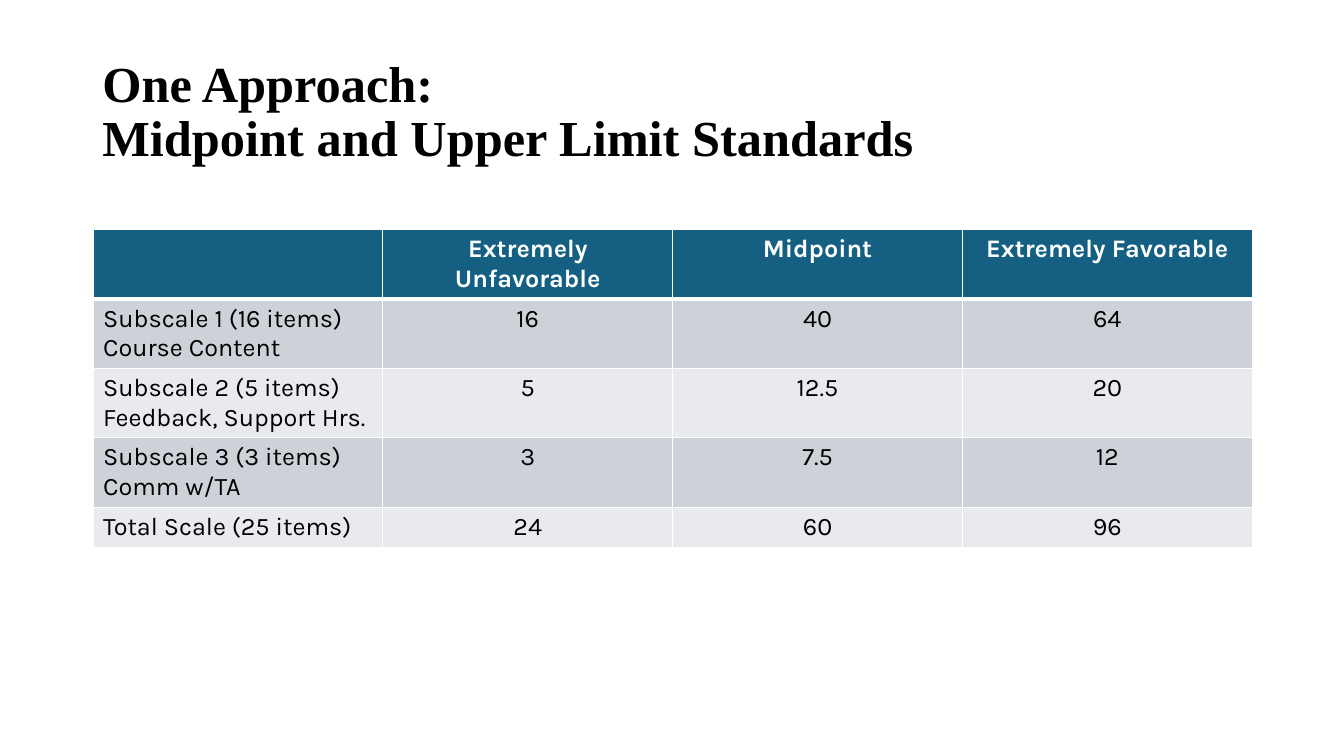
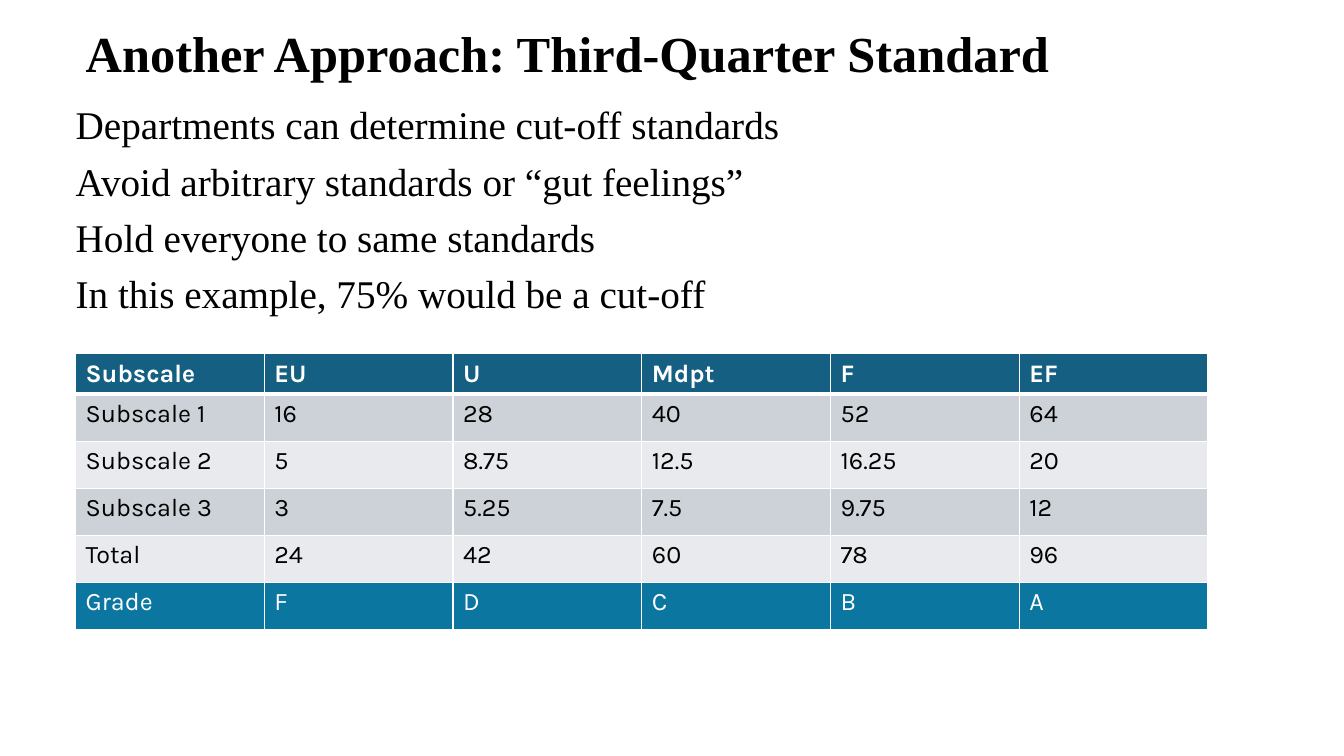
"""Build two slides on approaches to scale standards."""
from copy import deepcopy
from dataclasses import dataclass
from typing import Any, NamedTuple

from lxml.etree import SubElement
from pptx import Presentation
from pptx.dml.color import RGBColor
from pptx.enum.text import MSO_ANCHOR, MSO_AUTO_SIZE, PP_ALIGN
from pptx.oxml.ns import qn
from pptx.util import Pt


@dataclass(frozen=True)
class Theme:
    ink: str = "000000"
    white: str = "FFFFFF"
    head: str = "156082"
    odd: str = "CCD2D8"
    even: str = "E8EAED"
    grade: str = "0B76A0"
    serif: str = "Times New Roman"
    sans: str = "Karla"
    title: int = 36
    body: int = 28
    cell: int = 18
    thin: int = 1
    thick: int = 3


class Box(NamedTuple):
    left: float
    top: float
    width: float
    height: float


@dataclass(frozen=True)
class Grid:
    left: float
    top: float
    width: float
    rows: list[list[str]]
    heights: list[float]
    align: Any = PP_ALIGN.LEFT
    grade: bool = False


LOOK = Theme()
TITLE = dict(name=LOOK.serif, size=Pt(LOOK.title), bold=True)
BODY = dict(name=LOOK.serif, size=Pt(LOOK.body), bold=False)
CELL = dict(name=LOOK.sans, size=Pt(LOOK.cell), bold=False)
HEAD = CELL | dict(bold=True)
TIGHT = dict(alignment=PP_ALIGN.LEFT, line_spacing=0.9)
PLAIN = dict(first_row=False, horz_banding=False)

LIMITS = Grid(66.5, 164, 828, [
    ["", "Extremely Unfavorable", "Midpoint", "Extremely Favorable"],
    ["Subscale 1 (16 items)\nCourse Content", "16", "40", "64"],
    ["Subscale 2 (5 items)\nFeedback, Support Hrs.", "5", "12.5", "20"],
    ["Subscale 3 (3 items)\nComm w/TA", "3", "7.5", "12"],
    ["Total Scale (25 items)", "24", "60", "96"],
], [49, *[49.6] * 3, 29.2], PP_ALIGN.CENTER)

QUARTERS = Grid(54, 252.7, 809, [
    ["Subscale", "EU", "U", "Mdpt", "F", "EF"],
    ["Subscale 1", "16", "28", "40", "52", "64"],
    ["Subscale 2", "5", "8.75", "12.5", "16.25", "20"],
    ["Subscale 3", "3", "5.25", "7.5", "9.75", "12"],
    ["Total", "24", "42", "60", "78", "96"],
    ["Grade", "F", "D", "C", "B", "A"],
], [28, *[33.6] * 5], grade=True)

POINTS = """Departments can determine cut-off standards
Avoid arbitrary standards or “gut feelings”
Hold everyone to same standards
In this example, 75% would be a cut-off"""


def apply(item: Any, style: dict[str, Any]) -> None:
    """Set every attribute in a style."""
    for key, value in style.items():
        setattr(item, key, value)


def paint(frame: Any, font: dict[str, Any], para: dict[str, Any],
          ink: str = LOOK.ink) -> None:
    """Format all the paragraphs of a text frame."""
    for line in frame.paragraphs:
        apply(line, para)
        for run in line.runs:
            apply(run.font, font)
            run.font.color.rgb = RGBColor.from_string(ink)
            for gap in line._p.findall(qn("a:br")):
                if not len(gap):
                    gap.append(deepcopy(run._r.rPr))


def add_title(deck: Any, text: str, box: Box) -> Any:
    """Add a title-only slide and place its title."""
    slide = deck.slides.add_slide(deck.slide_layouts[5])
    title = slide.shapes.title
    apply(title, {key: Pt(value) for key, value in box._asdict().items()})
    frame = title.text_frame
    frame.paragraphs[0].text = text
    apply(frame, dict(vertical_anchor=MSO_ANCHOR.MIDDLE, word_wrap=True,
                      auto_size=MSO_AUTO_SIZE.NONE))
    paint(frame, TITLE, TIGHT)
    return slide


def add_points(slide: Any, text: str, box: Box) -> None:
    """Add plain body lines."""
    frame = slide.shapes.add_textbox(*map(Pt, box)).text_frame
    frame.text = text
    frame.word_wrap = True
    paint(frame, BODY, TIGHT | dict(space_before=Pt(10)))


def edge(cell: Any, top: int, bottom: int) -> None:
    """Draw the four white borders of a cell."""
    props = cell._tc.get_or_add_tcPr()
    sides = dict(lnL=LOOK.thin, lnR=LOOK.thin, lnT=top, lnB=bottom)
    for spot, (side, width) in enumerate(sides.items()):
        line = SubElement(props, qn(f"a:{side}"), w=str(Pt(width)))
        fill = SubElement(line, qn("a:solidFill"))
        SubElement(fill, qn("a:srgbClr"), val=LOOK.white)
        props.insert(spot, line)


def shade(grid: Grid, row: int) -> str:
    """Choose the fill of a row."""
    if row == 0:
        return LOOK.head
    if grid.grade and row == len(grid.rows) - 1:
        return LOOK.grade
    return LOOK.odd if row % 2 else LOOK.even


def add_grid(slide: Any, grid: Grid) -> None:
    """Add a table with a header and banded rows."""
    count = len(grid.rows[0])
    box = Box(grid.left, grid.top, grid.width, sum(grid.heights))
    table = slide.shapes.add_table(len(grid.rows), count, *map(Pt, box)).table
    apply(table, PLAIN)
    for col in table.columns:
        col.width = Pt(grid.width / count)
    for row, (texts, height) in enumerate(zip(grid.rows, grid.heights)):
        table.rows[row].height = Pt(height)
        back = shade(grid, row)
        ink = LOOK.white if back in (LOOK.head, LOOK.grade) else LOOK.ink
        for col, text in enumerate(texts):
            cell = table.cell(row, col)
            cell.text = text
            cell.fill.solid()
            cell.fill.fore_color.rgb = RGBColor.from_string(back)
            edge(cell, LOOK.thick if row == 1 else LOOK.thin,
                 LOOK.thick if row == 0 else LOOK.thin)
            align = grid.align if col else PP_ALIGN.LEFT
            paint(cell.text_frame, CELL if row else HEAD,
                  dict(alignment=align), ink)


def main() -> None:
    """Build and save the deck."""
    deck = Presentation()
    apply(deck, dict(slide_width=Pt(960), slide_height=Pt(540)))
    first = add_title(deck, "One Approach:\nMidpoint and Upper Limit Standards",
                      Box(66, 28.75, 828, 104.4))
    add_grid(first, LIMITS)
    second = add_title(deck, "Another Approach: Third-Quarter Standard",
                       Box(54, 0, 840, 80.6))
    add_points(second, POINTS, Box(47, 72, 847, 170))
    add_grid(second, QUARTERS)
    deck.save("out.pptx")


if __name__ == "__main__":
    main()
